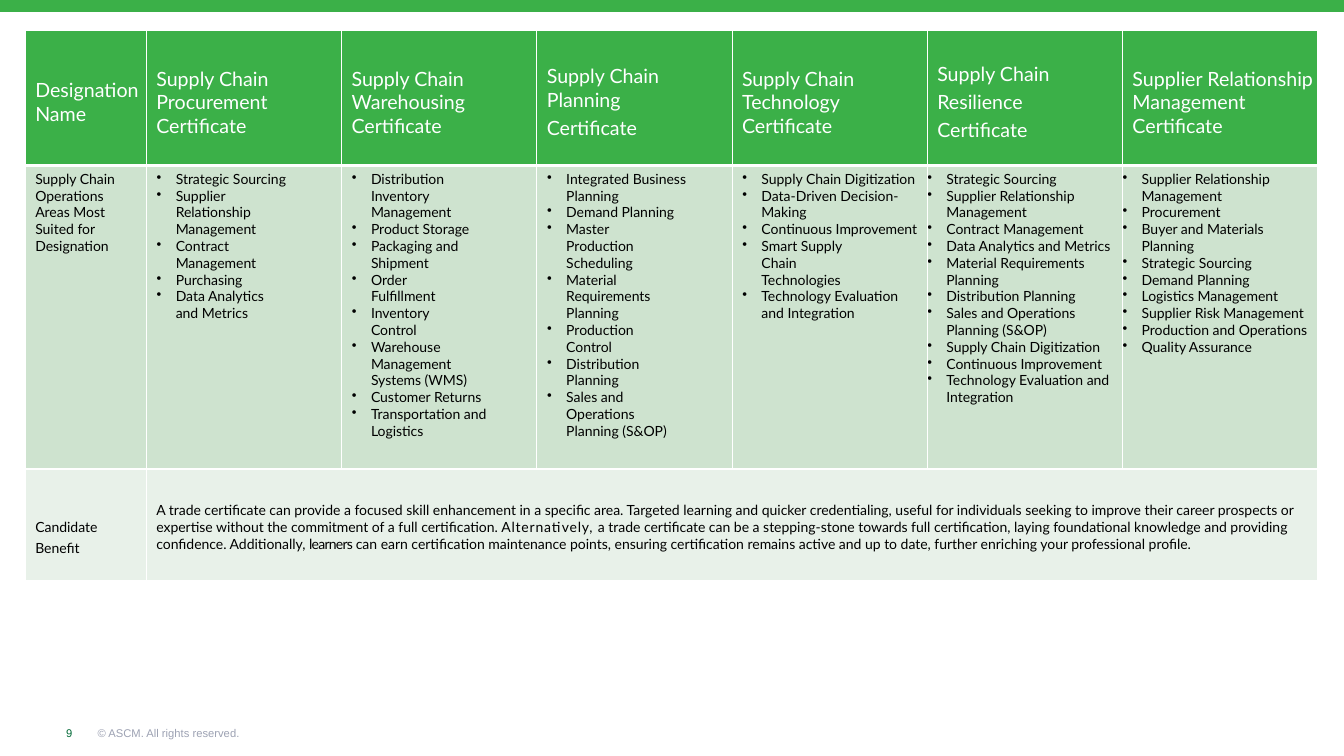
from lxml import etree
from pptx import Presentation
from pptx.dml.color import RGBColor
from pptx.enum import shapes, text
from pptx.oxml.ns import qn
from pptx.util import Cm, Pt

GREEN = RGBColor(0x3B, 0xB0, 0x48)
MID_GREEN = RGBColor(0xCE, 0xE3, 0xCF)
PALE_GREEN = RGBColor(0xE8, 0xF1, 0xE9)
DARK_GREEN = RGBColor(0x00, 0x69, 0x36)
GREY = RGBColor(0x9D, 0xA2, 0xB3)
WHITE = RGBColor(0xFF, 0xFF, 0xFF)
BLACK = RGBColor(0, 0, 0)

# Content: one entry per certificate; heading paragraphs, bullet indent (cm),
# usual right margin (cm), then bullets, as (bullet, right margin) where it differs
CERTIFICATES = [
    (["Supply Chain Procurement Certificate"], 0.74, 1.4, [
        "Strategic Sourcing", "Supplier Relationship Management",
        "Contract Management", "Purchasing", "Data Analytics and Metrics"]),
    (["Supply Chain Warehousing Certificate"], 0.74, 1.15, [
        "Distribution Inventory Management", "Product Storage",
        "Packaging and Shipment", ("Order Fulfillment", 2),
        ("Inventory Control", 2), "Warehouse Management Systems (WMS)",
        "Customer Returns", "Transportation and Logistics"]),
    (["Supply Chain Planning", "Certificate"], 0.74, 1.5, [
        ("Integrated Business Planning", 0.5), ("Demand Planning", 0.5),
        ("Master Production Scheduling", 2.2), "Material Requirements Planning",
        ("Production Control", 2.2), "Distribution Planning",
        "Sales and Operations Planning (S&OP)"]),
    (["Supply Chain Technology Certificate"], 0.74, 0, [
        "Supply Chain Digitization", "Data-Driven Decision-Making",
        "Continuous Improvement", ("Smart Supply Chain Technologies", 1.8),
        ("Technology Evaluation and Integration", 0.5)]),
    (["Supply Chain", "Resilience", "Certificate"], 0.48, 0, [
        "Strategic Sourcing", "Supplier Relationship Management",
        "Contract Management", "Data Analytics and Metrics",
        "Material Requirements Planning", "Distribution Planning",
        "Sales and Operations Planning (S&OP)", "Supply Chain Digitization",
        "Continuous Improvement", "Technology Evaluation and Integration"]),
    (["Supplier Relationship Management Certificate"], 0.48, 0, [
        "Supplier Relationship Management", "Procurement",
        "Buyer and Materials Planning", "Strategic Sourcing", "Demand Planning",
        "Logistics Management", "Supplier Risk Management",
        "Production and Operations", "Quality Assurance"]),
]
NAME_LABEL = ["Designation Name"]
AREAS_LABEL = ["Supply Chain Operations Areas Most Suited for Designation"]
BENEFIT_LABEL = ["Candidate", "Benefit"]
# Runs of the benefit text with their letter spacing in points
BENEFIT = [
    ("A trade certificate can provide a focused skill enhancement in a specific "
     "area. Targeted learning and quicker credentialing, useful for individuals "
     "seeking to improve their career prospects or expertise without the "
     "commitment of a full certification. ", 0),
    ("Alternatively, ", 0.6),
    ("a trade certificate can be a stepping-stone towards full certification, "
     "laying foundational knowledge and providing confidence. Additionally, ", 0),
    ("learners ", -0.5),
    ("can earn certification maintenance points, ensuring certification remains "
     "active and up to date, further enriching your professional profile.", 0),
]
FOOTER = [("9", 1.67, 0.4, DARK_GREEN),
          ("© ASCM. All rights reserved.", 2.46, 3.7, GREY)]

COLUMN_WIDTHS = [3.05] + [4.92] * len(CERTIFICATES)
ROW_HEIGHTS = [3.4, 7.65, 2.8]
TEXT_INDENT = 0.25
HANGING = 0.48


def set_font(paragraph, name, size, color):
    font = paragraph.font
    font.name, font.size, font.bold = name, Pt(size), False
    font.color.rgb = color


def style_cell(cell, fill, top=1, bottom=1, inset=0.13, middle=True):
    cell.margin_left = cell.margin_right = cell.margin_bottom = 0
    cell.margin_top = Cm(inset)
    cell.vertical_anchor = text.MSO_ANCHOR.MIDDLE if middle else text.MSO_ANCHOR.TOP
    properties = cell._tc.get_or_add_tcPr()
    for side, width in (("L", 1), ("R", 1), ("T", top), ("B", bottom)):
        border = etree.SubElement(properties, qn(f"a:ln{side}"), w=str(Pt(width)))
        solid = etree.SubElement(border, qn("a:solidFill"))
        etree.SubElement(solid, qn("a:srgbClr"), val=str(WHITE))
    cell.fill.solid()
    cell.fill.fore_color.rgb = fill


def add_paragraph(cell, index, left, right=0, bullet=False):
    frame = cell.text_frame
    paragraph = frame.add_paragraph() if index else frame.paragraphs[0]
    properties = paragraph._p.get_or_add_pPr()
    properties.set("marL", str(Cm(left)))
    properties.set("marR", str(Cm(right)))
    properties.set("indent", str(Cm(-HANGING if bullet else 0)))
    if bullet:
        etree.SubElement(properties, qn("a:buChar"), char="•")
    return paragraph


def write_lines(cell, lines, size, color, right=0):
    for index, line in enumerate(lines):
        paragraph = add_paragraph(cell, index, TEXT_INDENT, right)
        paragraph.text = line
        if index:
            paragraph.space_before = Pt(3.3)
        set_font(paragraph, "Lato", size, color)


def write_bullets(cell, bullets, left, usual_right):
    for index, item in enumerate(bullets):
        words, right = (item, usual_right) if isinstance(item, str) else item
        paragraph = add_paragraph(cell, index, left, right, bullet=True)
        paragraph.text = words
        set_font(paragraph, "Lato", 10, BLACK)


def main():
    prs = Presentation()
    prs.slide_width, prs.slide_height = Cm(33.87), Cm(19.05)
    slide = prs.slides.add_slide(prs.slide_layouts[6])

    # Top band
    band = slide.shapes.add_shape(shapes.MSO_SHAPE.RECTANGLE, 0, 0,
                                  prs.slide_width, Cm(0.3))
    band.shadow.inherit = False
    band.fill.solid()
    band.fill.fore_color.rgb = GREEN
    band.line.fill.background()

    # Certificate table
    table = slide.shapes.add_table(
        len(ROW_HEIGHTS), len(COLUMN_WIDTHS), Cm(0.64), Cm(0.77),
        Cm(sum(COLUMN_WIDTHS)), Cm(sum(ROW_HEIGHTS))).table
    table.first_row = table.horz_banding = False
    for column, width in zip(table.columns, COLUMN_WIDTHS):
        column.width = Cm(width)
    for row, height in zip(table.rows, ROW_HEIGHTS):
        row.height = Cm(height)
    for column in range(len(COLUMN_WIDTHS)):
        style_cell(table.cell(0, column), GREEN, bottom=3, inset=0.2)
        style_cell(table.cell(1, column), MID_GREEN, top=3, middle=False)
        style_cell(table.cell(2, column), PALE_GREEN)

    # Row labels
    write_lines(table.cell(0, 0), NAME_LABEL, 14, WHITE)
    write_lines(table.cell(1, 0), AREAS_LABEL, 10, BLACK, right=0.25)
    write_lines(table.cell(2, 0), BENEFIT_LABEL, 10, BLACK)
    table.cell(2, 0).margin_top = Cm(0.66)

    # Certificate columns
    for column, (heading, left, right, bullets) in enumerate(CERTIFICATES, 1):
        write_lines(table.cell(0, column), heading, 14, WHITE)
        write_bullets(table.cell(1, column), bullets, left, right)

    # Benefit text across all certificates
    benefit = table.cell(2, 1)
    benefit.merge(table.cell(2, len(CERTIFICATES)))
    paragraph = add_paragraph(benefit, 0, TEXT_INDENT, right=0.5)
    for words, spacing in BENEFIT:
        run = paragraph.add_run()
        run.text = words
        if spacing:
            run._r.get_or_add_rPr().set("spc", str(round(spacing * 100)))
    set_font(paragraph, "Lato", 10, BLACK)

    # Footer
    for words, left, width, color in FOOTER:
        frame = slide.shapes.add_textbox(Cm(left), Cm(18.3), Cm(width),
                                         Cm(0.38)).text_frame
        frame.margin_left = frame.margin_right = 0
        frame.margin_top = frame.margin_bottom = 0
        frame.word_wrap = False
        frame.text = words
        set_font(frame.paragraphs[0], "Arial", 8, color)

    prs.save("out.pptx")


if __name__ == "__main__":
    main()
